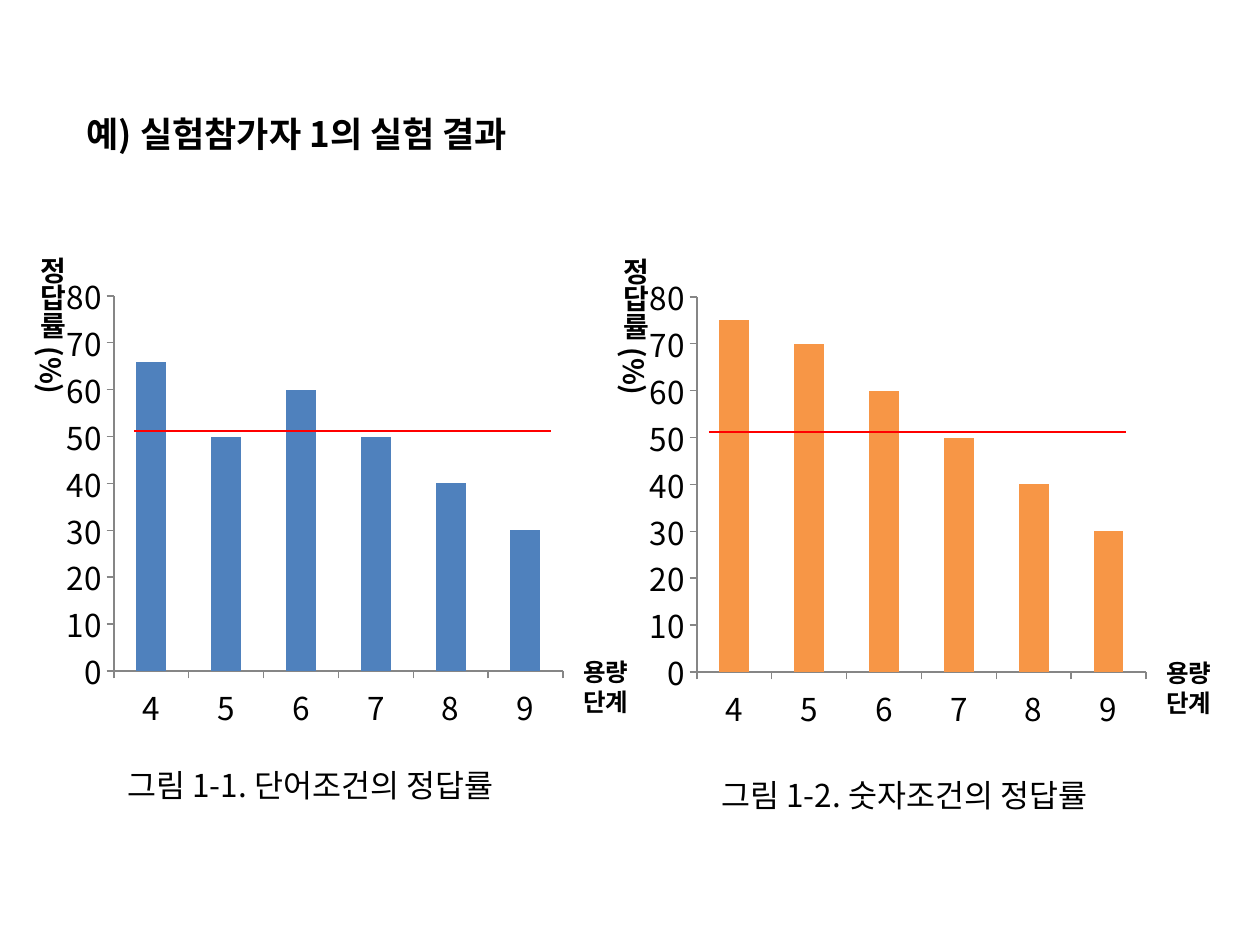
from lxml.etree import SubElement
from pptx import Presentation
from pptx.chart.data import CategoryChartData
from pptx.dml.color import RGBColor
from pptx.enum.chart import XL_CHART_TYPE, XL_TICK_MARK
from pptx.enum.shapes import MSO_CONNECTOR
from pptx.enum.text import MSO_ANCHOR, MSO_AUTO_SIZE, PP_ALIGN
from pptx.oxml import parse_xml
from pptx.oxml.ns import nsdecls, qn
from pptx.util import Pt

SCALE = 914400 / 126
FONT = "Noto Sans CJK KR"
BLACK = RGBColor(0x00, 0x00, 0x00)
BLUE = RGBColor(0x4F, 0x81, 0xBD)
ORANGE = RGBColor(0xF7, 0x96, 0x46)
RED = RGBColor(0xFF, 0x00, 0x00)
GRAY = RGBColor(0x86, 0x86, 0x86)
LEVELS = ["4", "5", "6", "7", "8", "9"]
CHART_SIZE = (515, 475)
PLOT_BOX = (57, 31, 449, 375)


def px(*lengths):
    return [round(length * SCALE) for length in lengths]


def style_font(font, size, bold=False):
    font.size = Pt(size)
    font.bold = bold
    font.color.rgb = BLACK
    font.name = FONT
    SubElement(font._rPr, qn("a:ea")).set("typeface", FONT)


def write_text(box, text, size=18, bold=False, vertical=False):
    frame = box.text_frame
    frame.word_wrap = True
    frame.auto_size = MSO_AUTO_SIZE.NONE
    frame.vertical_anchor = MSO_ANCHOR.TOP
    if vertical:
        frame._txBody.bodyPr.set("vert", "eaVert")
    for index, line in enumerate(text.split("\n")):
        para = frame.add_paragraph() if index else frame.paragraphs[0]
        para.alignment = PP_ALIGN.LEFT
        span = para.add_run()
        span.text = line
        style_font(span.font, size, bold)


def add_label(page, left, top, width, height, text, **style):
    box = page.shapes.add_textbox(*px(left, top, width, height))
    write_text(box, text, **style)


def add_title(page, left, top, width, height, text):
    box = page.shapes.title
    box.left, box.top, box.width, box.height = px(left, top, width, height)
    write_text(box, text, size=20, bold=True)


def fix_plot_box(chart):
    left, top, width, height = PLOT_BOX
    fractions = {
        "x": left / CHART_SIZE[0],
        "y": top / CHART_SIZE[1],
        "w": width / CHART_SIZE[0],
        "h": height / CHART_SIZE[1],
    }
    modes = '<c:xMode val="edge"/><c:yMode val="edge"/>'
    sizes = "".join(f'<c:{key} val="{value:.4f}"/>' for key, value in fractions.items())
    layout = parse_xml(
        f'<c:layout {nsdecls("c")}><c:manualLayout><c:layoutTarget val="inner"/>'
        f"{modes}{sizes}</c:manualLayout></c:layout>"
    )
    plot_area = chart._chartSpace.chart.plotArea
    for old_layout in plot_area.findall(qn("c:layout")):
        plot_area.remove(old_layout)
    plot_area.insert(0, layout)


def add_bar_chart(page, left, top, values, color):
    data = CategoryChartData()
    data.categories = LEVELS
    data.add_series("정답률", values)
    chart = page.shapes.add_chart(
        XL_CHART_TYPE.COLUMN_CLUSTERED, *px(left, top, *CHART_SIZE), data
    ).chart
    chart.has_legend = False
    chart.has_title = False
    style_font(chart.font, 18)
    plot = chart.plots[0]
    plot.gap_width = 150
    plot.vary_by_categories = False
    fill = plot.series[0].format.fill
    fill.solid()
    fill.fore_color.rgb = color
    for axis in (chart.category_axis, chart.value_axis):
        axis.has_major_gridlines = False
        axis.major_tick_mark = XL_TICK_MARK.OUTSIDE
        axis.format.line.color.rgb = GRAY
        axis.format.line.width = Pt(0.75)
    chart.value_axis.minimum_scale = 0
    chart.value_axis.maximum_scale = 80
    chart.value_axis.major_unit = 10
    fix_plot_box(chart)


def add_threshold(page, left, top, width):
    line = page.shapes.add_connector(
        MSO_CONNECTOR.STRAIGHT, *px(left, top, left + width, top)
    )
    line.line.color.rgb = RED
    line.line.width = Pt(1.5)
    SubElement(line._element.spPr, qn("a:effectLst"))


def add_result(page, left, top, values, color, caption, caption_offset, line_offset):
    add_bar_chart(page, left, top, values, color)
    add_label(page, left + 514, top + 386, 79, 72, "용량\n단계", size=14, bold=True)
    add_label(page, left - 41, top - 21, 59, 179, "정답률 (%)",
              size=16, bold=True, vertical=True)
    add_label(page, left + caption_offset[0], top + caption_offset[1], 446, 50, caption)
    add_threshold(page, left + line_offset, top + 166, 417)


def main():
    deck = Presentation()
    deck.slide_width, deck.slide_height = px(1260, 945)
    page = deck.slides.add_slide(deck.slide_layouts[5])
    add_title(page, 74, 106, 576, 55, "예) 실험참가자 1의 실험 결과")
    add_result(page, 57, 265, (66, 50, 60, 50, 40, 30), BLUE,
               "그림 1-1. 단어조건의 정답률", (58, 495), 77)
    add_result(page, 640, 266, (75, 70, 60, 50, 40, 30), ORANGE,
               "그림 1-2. 숫자조건의 정답률", (69, 504), 69)
    deck.save("out.pptx")


if __name__ == "__main__":
    main()
